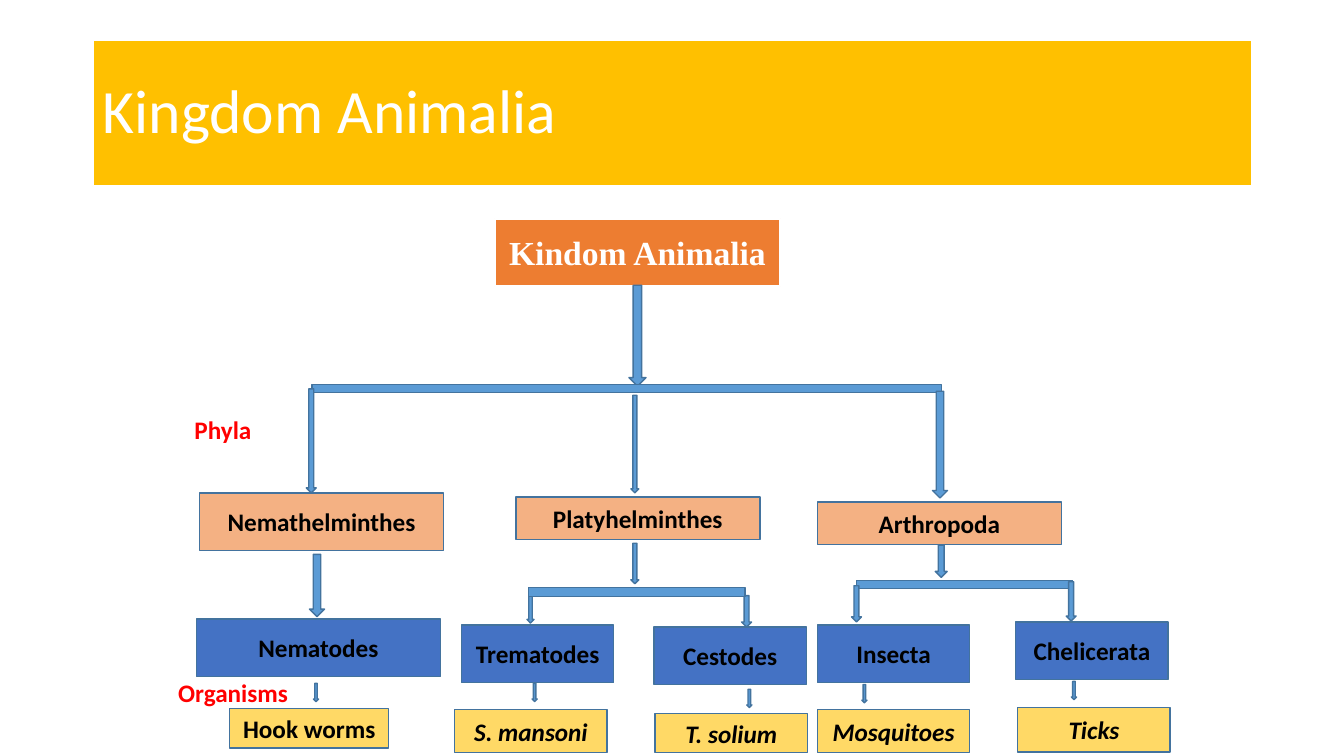
from dataclasses import dataclass

from pptx import Presentation
from pptx.dml.color import RGBColor
from pptx.enum.shapes import MSO_SHAPE
from pptx.enum.text import MSO_ANCHOR, MSO_AUTO_SIZE, PP_ALIGN
from pptx.util import Cm, Pt


@dataclass(frozen=True)
class Theme:
    white: str = "FFFFFF"
    black: str = "000000"
    red: str = "FF0000"
    gold: str = "FFC000"
    orange: str = "ED7D31"
    peach: str = "F4B183"
    blue: str = "4472C4"
    yellow: str = "FFD966"
    arrow: str = "5B9BD5"
    outline: str = "43739E"
    font: str = "Calibri"
    root_font: str = "Times New Roman"
    title_size: int = 44
    root_size: int = 24
    body_size: int = 18


class TreeSlide:
    """Draws the parts of a classification tree; lengths are in centimetres."""

    def __init__(self, slide, theme):
        self.slide = slide
        self.theme = theme

    def shape(self, kind, place, fill, outline=None, width=1):
        shape = self.slide.shapes.add_shape(kind, *map(Cm, place))
        shape.shadow.inherit = False
        shape.fill.solid()
        shape.fill.fore_color.rgb = RGBColor.from_string(fill)
        shape.line.color.rgb = RGBColor.from_string(outline or self.theme.outline)
        shape.line.width = Pt(width)
        return shape

    def set_text(self, shape, text, color, size=None, font=None, bold=True,
                 italic=False, align=PP_ALIGN.CENTER):
        frame = shape.text_frame
        frame.word_wrap = True
        frame.text = text
        paragraph = frame.paragraphs[0]
        paragraph.alignment = align
        style = paragraph.runs[0].font
        style.name = font or self.theme.font
        style.size = Pt(size or self.theme.body_size)
        style.bold = bold
        style.italic = italic
        style.color.rgb = RGBColor.from_string(color)
        return paragraph

    def title(self, text, place):
        theme = self.theme
        banner = self.shape(MSO_SHAPE.RECTANGLE, place, theme.gold, theme.white, 1.5)
        banner.text_frame.vertical_anchor = MSO_ANCHOR.MIDDLE
        paragraph = self.set_text(banner, text, theme.white, theme.title_size,
                                  bold=False, align=PP_ALIGN.LEFT)
        paragraph.line_spacing = 0.9

    def root(self, text, place):
        theme = self.theme
        box = self.shape(MSO_SHAPE.RECTANGLE, place, theme.orange, theme.white, 1.5)
        box.text_frame.vertical_anchor = MSO_ANCHOR.MIDDLE
        self.set_text(box, text, theme.white, theme.root_size, theme.root_font)

    def box(self, text, place, fill, italic=False):
        box = self.shape(MSO_SHAPE.RECTANGLE, place, fill)
        box.text_frame.vertical_anchor = MSO_ANCHOR.MIDDLE
        self.set_text(box, text, self.theme.black, italic=italic)

    def arrow(self, *place):
        self.shape(MSO_SHAPE.DOWN_ARROW, place, self.theme.arrow)

    def bar(self, *place):
        self.shape(MSO_SHAPE.MATH_MINUS, place, self.theme.arrow)

    def label(self, text, place):
        label = self.slide.shapes.add_textbox(*map(Cm, place))
        self.set_text(label, text, self.theme.red, align=PP_ALIGN.LEFT)
        label.text_frame.auto_size = MSO_AUTO_SIZE.SHAPE_TO_FIT_TEXT


PHYLUM_WIDTH = 6.15
CLASS_WIDTH, CLASS_HEIGHT = 3.84, 1.45

# Name, left, top, height
PHYLA = [
    ("Nemathelminthes", 5.03, 12.42, 1.45),
    ("Platyhelminthes", 13, 12.52, 1.07),
    ("Arthropoda", 20.6, 12.65, 1.07),
]
# Name, left, top, width
CLASSES = [
    ("Nematodes", 4.95, 15.6, PHYLUM_WIDTH),
    ("Trematodes", 11.63, 15.75, CLASS_WIDTH),
    ("Cestodes", 16.48, 15.8, CLASS_WIDTH),
    ("Insecta", 20.6, 15.75, CLASS_WIDTH),
    ("Chelicerata", 25.6, 15.67, CLASS_WIDTH),
]
# Name, place, italic
ORGANISMS = [
    ("Hook worms", (5.79, 17.86, 4.01, 0.99), False),
    ("S. mansoni", (11.46, 17.88, CLASS_WIDTH, 1.09), True),
    ("T. solium", (16.51, 17.98, CLASS_WIDTH, 0.99), True),
    ("Mosquitoes", (20.6, 17.88, CLASS_WIDTH, 1.09), True),
    ("Ticks", (25.65, 17.83, CLASS_WIDTH, 1.12), True),
]
# Left, top, width, height
ARROWS_BEHIND_BARS = [
    (15.85, 7.19, 0.43, 2.54),
    (13.28, 14.96, 0.18, 0.74),
    (18.69, 15.01, 0.25, 0.79),
]
BARS = [
    (5, 9.37, 21.59, 0.84),
    (12.34, 14.43, 7.42, 0.97),
    (20.6, 14.3, 7.42, 0.86),
]
ARROWS_OVER_BARS = [
    # Kingdom to phyla
    (7.72, 9.8, 0.25, 2.62),
    (15.9, 9.96, 0.2, 2.46),
    (23.5, 9.86, 0.38, 2.69),
    # Phyla to classes
    (7.8, 13.97, 0.38, 1.57),
    (15.9, 13.69, 0.2, 1.02),
    (23.57, 13.74, 0.3, 0.81),
    (21.46, 14.76, 0.25, 0.91),
    (26.87, 14.66, 0.25, 0.99),
]
# Left and top of the short arrows from class to organism
ORGANISM_ARROWS = [(7.9, 17.22), (13.41, 17.22), (18.82, 17.37),
                   (21.72, 17.25), (27, 17.17)]


def main():
    presentation = Presentation()
    presentation.slide_width = Cm(33.87)
    presentation.slide_height = Cm(19.05)
    theme = Theme()
    tree = TreeSlide(presentation.slides.add_slide(presentation.slide_layouts[6]), theme)

    # Title and kingdom
    tree.title("Kingdom Animalia", (2.34, 1.02, 29.21, 3.68))
    tree.root("Kindom Animalia", (12.47, 5.51, 7.19, 1.7))

    # Branches
    for place in ARROWS_BEHIND_BARS:
        tree.arrow(*place)
    for place in BARS:
        tree.bar(*place)
    for place in ARROWS_OVER_BARS:
        tree.arrow(*place)

    # Three levels of boxes
    for name, left, top, height in PHYLA:
        tree.box(name, (left, top, PHYLUM_WIDTH, height), theme.peach)
    for name, left, top, width in CLASSES:
        tree.box(name, (left, top, width, CLASS_HEIGHT), theme.blue)
    for left, top in ORGANISM_ARROWS:
        tree.arrow(left, top, 0.13, 0.46)
    for name, place, italic in ORGANISMS:
        tree.box(name, place, theme.yellow, italic)

    # Level labels
    tree.label("Phyla", (4.65, 10.31, 3.07, 1.02))
    tree.label("Organisms", (4.24, 16.94, 3.48, 1.02))

    presentation.save("out.pptx")


if __name__ == "__main__":
    main()
